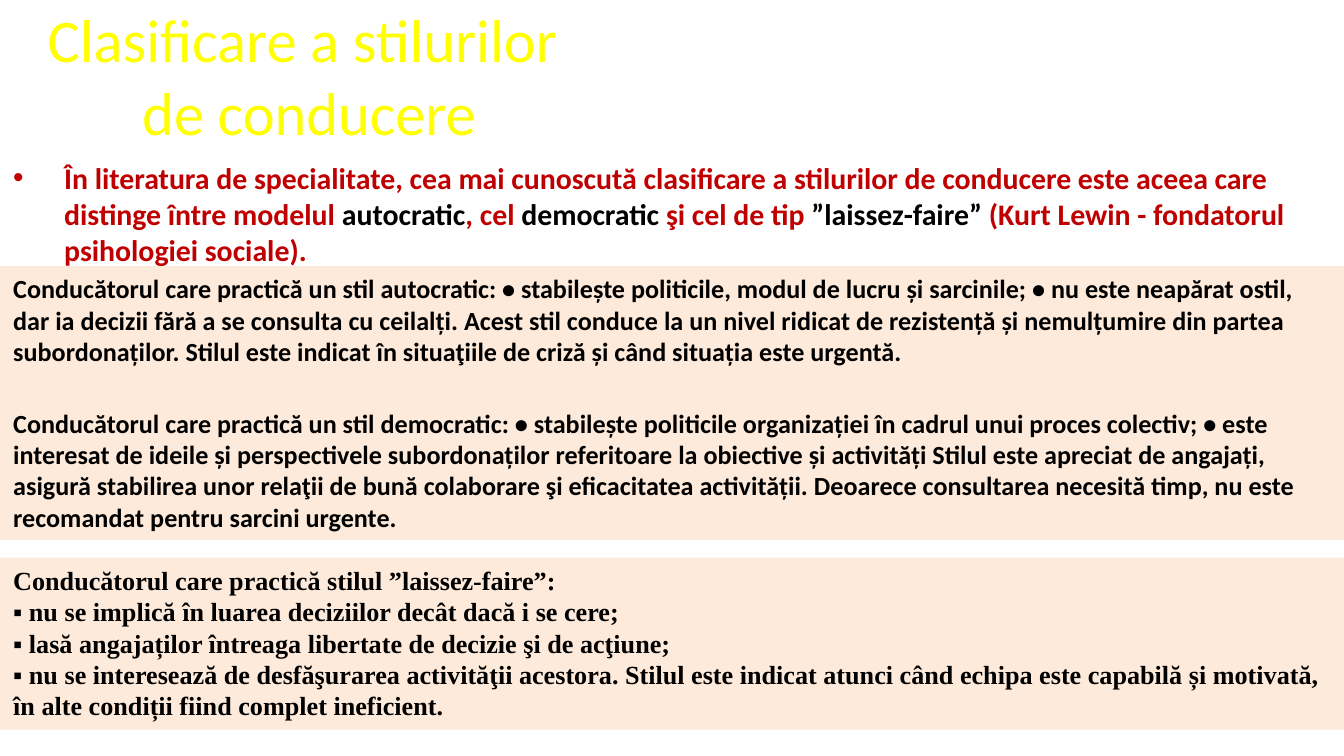
from lxml import etree
from pptx import Presentation
from pptx.dml.color import RGBColor
from pptx.enum.shapes import MSO_SHAPE
from pptx.enum.text import MSO_ANCHOR, MSO_AUTO_SIZE, PP_ALIGN
from pptx.oxml.ns import qn
from pptx.util import Inches, Pt

YELLOW = RGBColor(0xFF, 0xFF, 0x00)
RED = RGBColor(0xC0, 0x00, 0x00)
BLACK = RGBColor(0x00, 0x00, 0x00)
PEACH = RGBColor(0xFD, 0xEA, 0xDA)

TITLE = "Clasificare a stilurilor\v de conducere"
INTRO = [
    ("În literatura de specialitate, cea mai cunoscută clasificare a stilurilor de conducere este aceea care distinge între modelul ", RED),
    ("autocratic", BLACK),
    (", cel ", RED),
    ("democratic", BLACK),
    (" şi cel de tip ", RED),
    ("”laissez-faire” ", BLACK),
    ("(Kurt Lewin - fondatorul psihologiei sociale).", RED),
]
STYLES = [
    (1.98, 1.04, "Calibri", [
        "Conducătorul care practică un stil autocratic: • stabilește politicile, modul de lucru și sarcinile; • nu este neapărat ostil, dar ia decizii fără a se consulta cu ceilalți. Acest stil conduce la un nivel ridicat de rezistență și nemulțumire din partea subordonaților. Stilul este indicat în situaţiile de criză și când situația este urgentă.",
    ]),
    (2.98, 1.04, "Calibri", [
        "Conducătorul care practică un stil democratic: • stabilește politicile organizației în cadrul unui proces colectiv; • este interesat de ideile și perspectivele subordonaților referitoare la obiective și activități Stilul este apreciat de angajați, asigură stabilirea unor relaţii de bună colaborare şi eficacitatea activității. Deoarece consultarea necesită timp, nu este recomandat pentru sarcini urgente.",
    ]),
    (4.15, 1.28, "Times New Roman", [
        "Conducătorul care practică stilul ”laissez-faire”:",
        "▪ nu se implică în luarea deciziilor decât dacă i se cere;",
        "▪ lasă angajaților întreaga libertate de decizie şi de acţiune;",
        "▪ nu se interesează de desfăşurarea activităţii acestora. Stilul este indicat atunci când echipa este capabilă și motivată, în alte condiții fiind complet ineficient.",
    ]),
]


def set_attrs(obj, values):
    for name, value in values.items():
        setattr(obj, name, value)


def format_run(r, color, size, font="Calibri", bold=True):
    set_attrs(r.font, {"name": font, "size": Pt(size), "bold": bold})
    r.font.color.rgb = color


def add_bullet(p, indent):
    pPr = p._p.get_or_add_pPr()
    pPr.set("marL", str(Inches(indent)))
    pPr.set("indent", str(-Inches(indent)))
    etree.SubElement(pPr, qn("a:buFont")).set("typeface", "Arial")
    etree.SubElement(pPr, qn("a:buChar")).set("char", "•")


def add_title(s):
    title = s.shapes.title
    set_attrs(title, {"left": Inches(0.16), "top": Inches(0.14),
                      "width": Inches(4.18), "height": Inches(0.83)})
    tf = title.text_frame
    set_attrs(tf, {"auto_size": MSO_AUTO_SIZE.NONE, "word_wrap": True,
                   "vertical_anchor": MSO_ANCHOR.MIDDLE})
    p = tf.paragraphs[0]
    p.text = TITLE
    p.alignment = PP_ALIGN.CENTER
    for r in p.runs:
        format_run(r, YELLOW, 32.4, bold=False)


def add_intro(s, width):
    box = s.shapes.add_textbox(0, Inches(1.14), width, Inches(1))
    tf = box.text_frame
    tf.word_wrap = True
    p = tf.paragraphs[0]
    add_bullet(p, 0.38)
    for text, color in INTRO:
        r = p.add_run()
        r.text = text
        format_run(r, color, 16)


def add_style_panel(s, width, top, height, font, lines):
    sp = s.shapes.add_shape(MSO_SHAPE.RECTANGLE, 0, Inches(top), width, Inches(height))
    sp.shadow.inherit = False
    sp.fill.solid()
    sp.fill.fore_color.rgb = PEACH
    sp.line.fill.background()
    tf = sp.text_frame
    set_attrs(tf, {"word_wrap": True, "vertical_anchor": MSO_ANCHOR.TOP,
                   "auto_size": MSO_AUTO_SIZE.SHAPE_TO_FIT_TEXT})
    tf.text = "\n".join(lines)
    for p in tf.paragraphs:
        p.alignment = PP_ALIGN.LEFT
        format_run(p.runs[0], BLACK, 14, font)


def main():
    prs = Presentation()
    set_attrs(prs, {"slide_width": Inches(10), "slide_height": Inches(10 * 9 / 16)})
    s = prs.slides.add_slide(prs.slide_layouts[5])
    add_title(s)
    add_intro(s, prs.slide_width)
    for top, height, font, lines in STYLES:
        add_style_panel(s, prs.slide_width, top, height, font, lines)
    prs.save("out.pptx")


if __name__ == "__main__":
    main()
